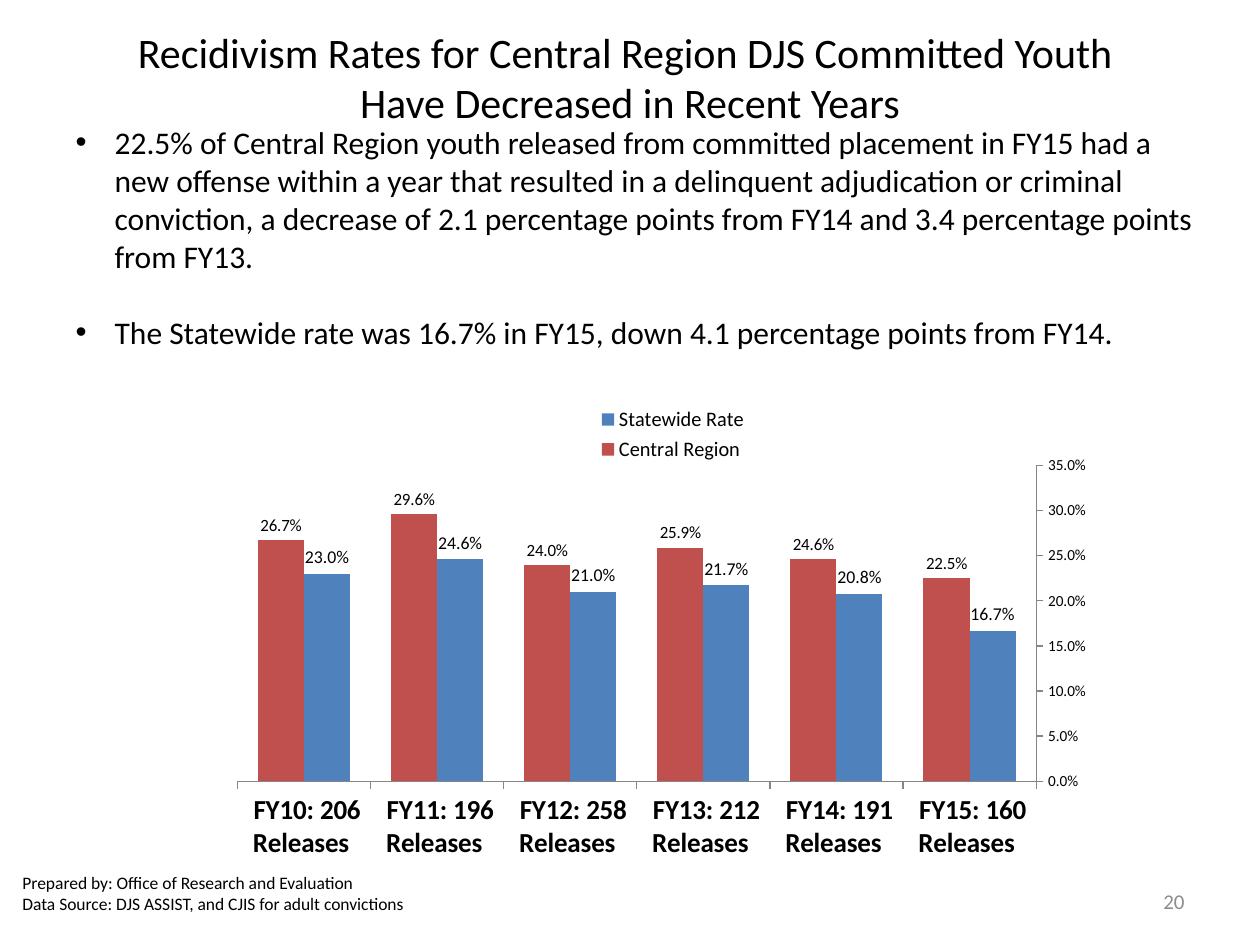
from lxml.etree import SubElement, Element
from pptx import Presentation
from pptx.chart.data import CategoryChartData as ChartData
from pptx.dml.color import RGBColor
from pptx.enum.chart import XL_AXIS_CROSSES as Cross, XL_CHART_TYPE as Kind
from pptx.enum.chart import XL_LABEL_POSITION as LabelPos, XL_LEGEND_POSITION as KeyPos
from pptx.enum.chart import XL_TICK_MARK as Tick
from pptx.enum.text import MSO_ANCHOR as Anchor, MSO_AUTO_SIZE as Fit, PP_ALIGN as Align
from pptx.oxml.ns import qn
from pptx.util import Inches, Pt

FONT = "Calibri"
BLACK = RGBColor(0x00, 0x00, 0x00)
GRAY = RGBColor(0x8C, 0x8C, 0x8C)
AXIS = RGBColor(0x86, 0x86, 0x86)
BLUE = RGBColor(0x4F, 0x81, 0xBD)
RED = RGBColor(0xC0, 0x50, 0x4D)

# Year, releases, statewide rate, regional rate
RATES = [
    ("FY15", 160, 0.167, 0.225),
    ("FY14", 191, 0.208, 0.246),
    ("FY13", 212, 0.217, 0.259),
    ("FY12", 258, 0.21, 0.24),
    ("FY11", 196, 0.246, 0.296),
    ("FY10", 206, 0.23, 0.267),
]
POINTS = [
    "22.5% of Central Region youth released from committed placement in FY15 "
    "had a new offense within a year that resulted in a delinquent adjudication "
    "or criminal conviction, a decrease of 2.1 percentage points from FY14 and "
    "3.4 percentage points from FY13.",
    "The Statewide rate was 16.7% in FY15, down 4.1 percentage points from FY14.",
]


def set_font(font, size, color=BLACK, bold=False):
    font.name, font.size, font.bold = FONT, Pt(size), bold
    font.color.rgb = color


def place(shape, box):
    shape.left, shape.top, shape.width, shape.height = map(Inches, box)


def write(shape, lines, size, color=BLACK, align=Align.LEFT):
    frame = shape.text_frame
    frame.text = "\n".join(lines)
    frame.word_wrap = True
    frame.auto_size = Fit.NONE
    frame.vertical_anchor = Anchor.MIDDLE
    for para in frame.paragraphs:
        para.alignment = align
        para.space_before = Pt(0)
        for run in para.runs:
            set_font(run.font, size, color)


def add_title(slide, box):
    title = slide.shapes.title
    place(title, box)
    write(title, ["Recidivism Rates for Central Region DJS Committed Youth \v"
                  "Have Decreased in Recent Years"], 24, align=Align.CENTER)


def add_points(slide, box):
    body = slide.placeholders[1]
    place(body, box)
    write(body, POINTS, 18)
    paras = body.text_frame.paragraphs
    for para in paras:
        props = para._p.get_or_add_pPr()
        props.set("marL", str(Inches(0.31)))
        props.set("indent", str(Inches(-0.31)))
    paras[1].space_before = Pt(22)


def add_note(slide, box, lines, size, color=BLACK, align=Align.LEFT):
    note = slide.shapes.add_textbox(*map(Inches, box))
    write(note, lines, size, color, align)


def set_layout(part, index, box, inner=False):
    """Pin a chart part to fractions of the chart area."""
    for old in part.findall(qn("c:layout")):
        part.remove(old)
    layout = Element(qn("c:layout"))
    manual = SubElement(layout, qn("c:manualLayout"))
    pairs = [("layoutTarget", "inner")] if inner else []
    pairs += [("xMode", "edge"), ("yMode", "edge"), *zip("xywh", box)]
    for tag, val in pairs:
        SubElement(manual, qn("c:" + tag)).set("val", str(val))
    part.insert(index, layout)


def add_rates(slide, box):
    data = ChartData(number_format="0.0%")
    data.categories = [f" {year}: {count} Releases " for year, count, *_ in RATES]
    data.add_series("Statewide Rate", [row[2] for row in RATES])
    data.add_series("Central Region", [row[3] for row in RATES])
    chart = slide.shapes.add_chart(
        Kind.COLUMN_CLUSTERED, *map(Inches, box), data).chart
    chart.has_title = False
    set_font(chart.font, 10)

    # Columns and their labels
    plot = chart.plots[0]
    plot.gap_width, plot.overlap = 89, 0
    plot.vary_by_categories = False
    for series, color, size in zip(plot.series, (BLUE, RED), (10.5, 10)):
        series.format.fill.solid()
        series.format.fill.fore_color.rgb = color
        labels = series.data_labels
        labels.show_value = True
        labels.position = LabelPos.OUTSIDE_END
        labels.number_format = "0.0%"
        labels.number_format_is_linked = False
        set_font(labels.font, size)

    # Axes: years run from right to left, values stay on the left
    years, values = chart.category_axis, chart.value_axis
    years.reverse_order = True
    years.crosses = Cross.MAXIMUM
    values.has_major_gridlines = False
    values.minimum_scale, values.maximum_scale = 0, 0.35
    values.major_unit = 0.05
    values.tick_labels.number_format = "0.0%"
    values.tick_labels.number_format_is_linked = False
    for axis, size, bold in ((years, 16, True), (values, 9, False)):
        axis.major_tick_mark = Tick.OUTSIDE
        axis.minor_tick_mark = Tick.NONE
        axis.format.line.color.rgb = AXIS
        axis.format.line.width = Pt(0.75)
        set_font(axis.tick_labels.font, size, bold=bold)

    # Legend and layout
    chart.has_legend = True
    chart.legend.position = KeyPos.RIGHT
    chart.legend.include_in_layout = False
    set_font(chart.legend.font, 12)
    area = chart.element.find(".//" + qn("c:plotArea"))
    set_layout(area, 0, (0.06, 0.167, 0.917, 0.68), inner=True)
    legend = chart.element.find(".//" + qn("c:legend"))
    set_layout(legend, 1, (0.46, 0.03, 0.2, 0.14))


def main():
    deck = Presentation()
    deck.slide_width, deck.slide_height = Inches(10), Inches(7.5)
    slide = deck.slides.add_slide(deck.slide_layouts[1])
    add_title(slide, (0, 0.3, 10, 0.62))
    add_points(slide, (0.5, 1.17, 9.08, 1.42))
    add_note(slide, (7.17, 6.95, 2.33, 0.4), ["20"], 12, GRAY, Align.RIGHT)
    add_note(slide, (0.08, 6.83, 3.42, 0.52),
             ["Prepared by: Office of Research and Evaluation",
              "Data Source: DJS ASSIST, and CJIS for adult convictions"], 10)
    add_rates(slide, (1.47, 3.08, 7.15, 3.75))
    deck.save("out.pptx")


if __name__ == "__main__":
    main()
